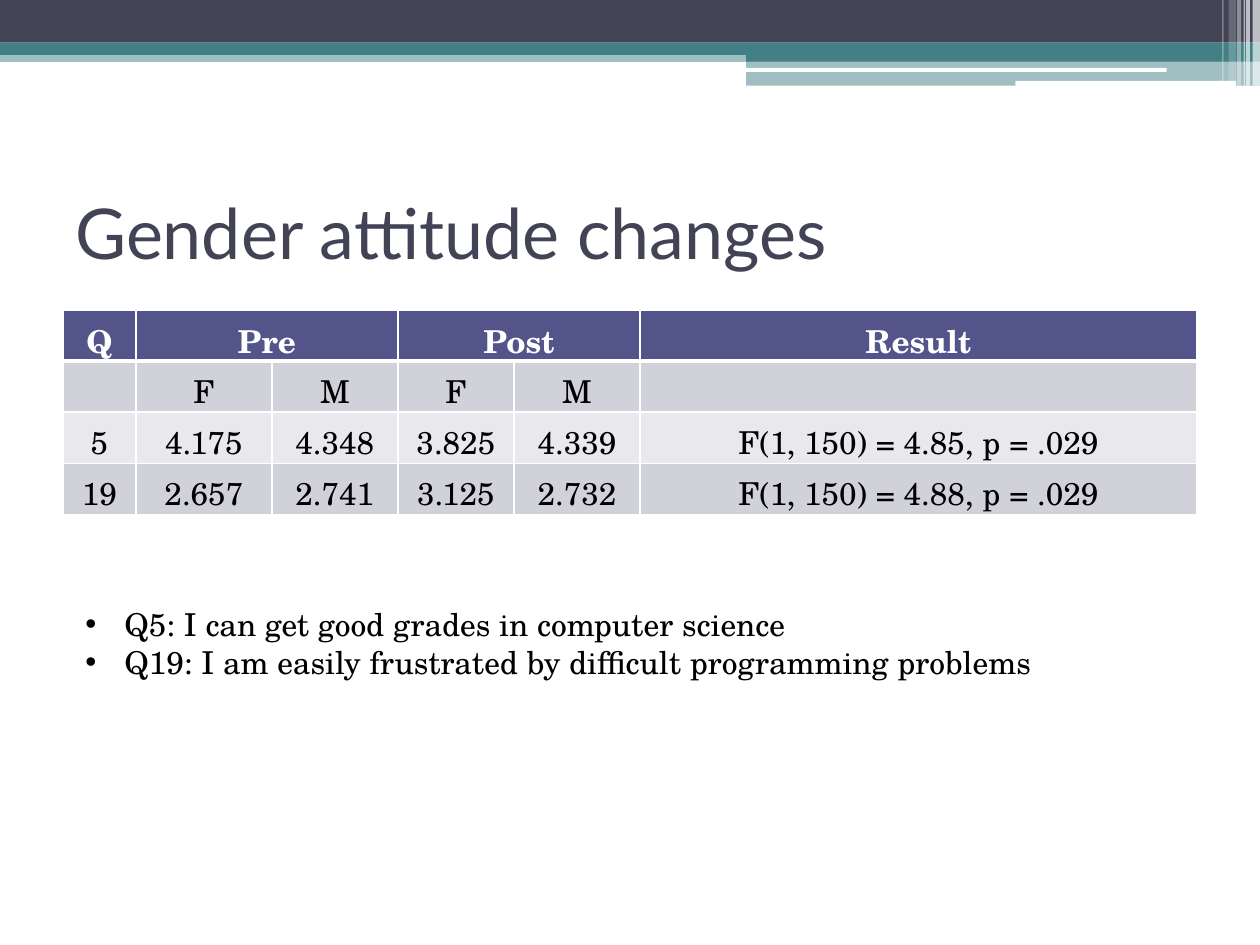
from dataclasses import dataclass

from lxml import etree
from pptx import Presentation
from pptx.dml.color import RGBColor
from pptx.enum.shapes import MSO_SHAPE
from pptx.enum.text import MSO_ANCHOR, PP_ALIGN
from pptx.oxml.ns import qn
from pptx.util import Cm, Pt

RECT = MSO_SHAPE.RECTANGLE
ROUND = MSO_SHAPE.ROUNDED_RECTANGLE
MIDDLE = MSO_ANCHOR.MIDDLE
LEFT, CENTER = PP_ALIGN.LEFT, PP_ALIGN.CENTER

NAVY, TEAL, WHITE, BLACK = "424456", "438086", "FFFFFF", "000000"
HEAD, DARK, LIGHT = "53548A", "D1D1DA", "E9E9ED"

BARS = [
    (0, 1.02, 25.4, 0.23, TEAL, 50),
    (0, 0, 25.4, 0.86, NAVY, 100),
    (0, 0.86, 25.4, 0.25, TEAL, 100),
    (15.04, 0.99, 10.36, 0.25, TEAL, 100),
    (15.04, 1.22, 10.36, 0.51, TEAL, 50),
]
PILLS = [(15.01, 1.37, 8.51, 0.08), (20.47, 1.63, 4.45, 0.1)]
STRIPES = [
    (25.25, 0.15, 1.73, 65),
    (25.12, 0.08, 1.73, 65),
    (25.07, 0.03, 1.73, 60),
    (24.94, 0.08, 1.73, 40),
    (24.77, 0.15, 1.63, 20),
    (24.64, 0.03, 1.63, 30),
]
COLS = [1.47, 2.74, 2.54, 2.34, 2.54, 11.23]
ROWS = [
    ["Q", "Pre", "", "Post", "", "Result"],
    ["", "F", "M", "F", "M", ""],
    ["5", "4.175", "4.348", "3.825", "4.339", "F(1, 150) = 4.85, p = .029"],
    ["19", "2.657", "2.741", "3.125", "2.732", "F(1, 150) = 4.88, p = .029"],
]
FILLS = [HEAD, DARK, LIGHT, DARK]
NOTES = [
    "Q5: I can get good grades in computer science",
    "Q19: I am easily frustrated by difficult programming problems",
]


def paint(fill, color):
    fill.solid()
    fill.fore_color.rgb = RGBColor.from_string(color)


@dataclass
class Deck:
    """Holds the style and the current slide."""

    slide: object
    face: str = "Lato"
    body: str = "TeX Gyre Schola"

    def style(self, para, face, size, color, bold=False, align=LEFT):
        para.alignment = align
        font = para.font
        font.name, font.size, font.bold = face, Pt(size), bold
        font.color.rgb = RGBColor.from_string(color)

    def bar(self, x, y, w, h, color, alpha=100, kind=RECT):
        shape = self.slide.shapes.add_shape(kind, Cm(x), Cm(y), Cm(w), Cm(h))
        shape.shadow.inherit = False
        shape.line.fill.background()
        paint(shape.fill, color)
        if alpha < 100:
            tone = shape.fill._xPr.find(".//" + qn("a:srgbClr"))
            etree.SubElement(tone, qn("a:alpha"), val=str(alpha * 1000))

    def box(self, x, y, w, h):
        frame = self.slide.shapes.add_textbox(Cm(x), Cm(y), Cm(w), Cm(h)).text_frame
        frame.word_wrap = True
        return frame

    def title(self, text, x, y, w, h):
        frame = self.box(x, y, w, h)
        frame.vertical_anchor = MIDDLE
        frame.text = text
        self.style(frame.paragraphs[0], self.face, 40, NAVY)

    def bullets(self, lines, x, y, w, h):
        frame = self.box(x, y, w, h)
        frame.text = "\n".join(lines)
        for para in frame.paragraphs:
            self.style(para, self.body, 18, BLACK)
            props = para._p.get_or_add_pPr()
            props.set("marL", str(Cm(0.79)))
            props.set("indent", str(-Cm(0.79)))
            font = etree.Element(qn("a:buFont"), typeface="Arial")
            mark = etree.Element(qn("a:buChar"), char="•")
            props.insert(0, font)
            props.insert(1, mark)

    def edge(self, cell, side, width):
        props = cell._tc.get_or_add_tcPr()
        line = etree.SubElement(props, qn("a:ln" + side), w=str(Pt(width)))
        fill = etree.SubElement(line, qn("a:solidFill"))
        etree.SubElement(fill, qn("a:srgbClr"), val=WHITE)

    def table(self, rows, x, y, high):
        size = Cm(x), Cm(y), Cm(sum(COLS)), Cm(high * len(rows))
        grid = self.slide.shapes.add_table(len(rows), len(COLS), *size).table
        for col, width in zip(grid.columns, COLS):
            col.width = Cm(width)
        for r, row in enumerate(rows):
            for c, text in enumerate(row):
                cell = grid.cell(r, c)
                for side in "LRTB":
                    thick = (r, side) in [(0, "B"), (1, "T")]
                    self.edge(cell, side, 3 if thick else 1)
                paint(cell.fill, FILLS[r])
                cell.text = text
                color = BLACK if r else WHITE
                self.style(cell.text_frame.paragraphs[0], self.body, 18, color, r == 0, CENTER)
        for c in (1, 3):
            grid.cell(0, c).merge(grid.cell(0, c + 1))


def main():
    show = Presentation()
    show.slide_width, show.slide_height = Cm(25.4), Cm(19.05)
    deck = Deck(show.slides.add_slide(show.slide_layouts[6]))
    for bar in BARS:
        deck.bar(*bar)
    for pill in PILLS:
        deck.bar(*pill, WHITE, kind=ROUND)
    for x, w, h, alpha in STRIPES:
        deck.bar(x, 0, w, h, WHITE, alpha)
    deck.title("Gender attitude changes", 1.27, 3.18, 22.86, 2.97)
    deck.table(ROWS, 1.27, 6.25, 1.03)
    deck.bullets(NOTES, 1.47, 12.07, 22.66, 1.8)
    show.save("out.pptx")


if __name__ == "__main__":
    main()
